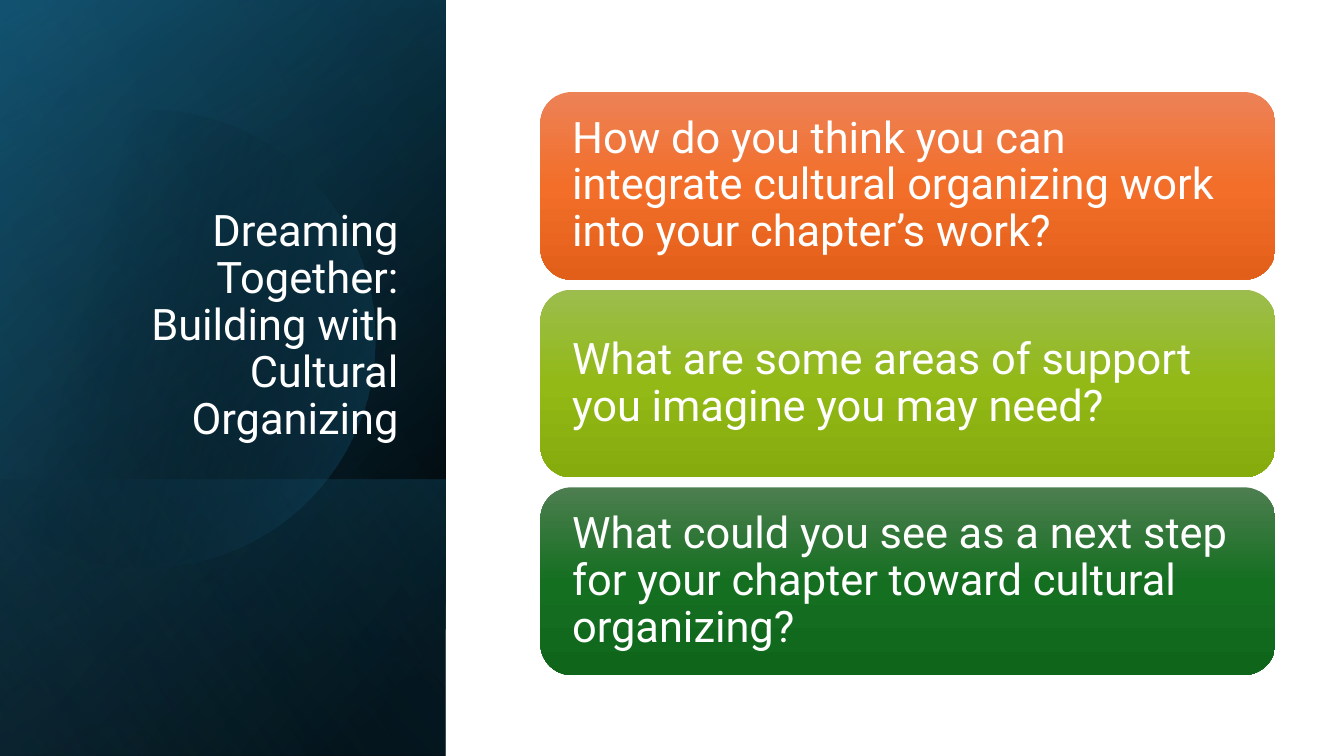
from math import acos, cos, sin

from lxml.etree import SubElement
from pptx import Presentation
from pptx.dml.color import RGBColor
from pptx.enum.shapes import MSO_SHAPE
from pptx.enum.text import MSO_ANCHOR, PP_ALIGN
from pptx.oxml.ns import qn
from pptx.util import Cm, Pt

BLACK = RGBColor(0x00, 0x00, 0x00)
WHITE = RGBColor(0xFF, 0xFF, 0xFF)
DEEP_BLUE = RGBColor(0x10, 0x48, 0x62)
BLUE = RGBColor(0x15, 0x60, 0x82)
SKY = RGBColor(0x46, 0xB1, 0xE1)
ORANGES = RGBColor(0xED, 0x82, 0x57), RGBColor(0xF2, 0x6E, 0x29), RGBColor(0xE2, 0x5F, 0x1A)
LIMES = RGBColor(0x9C, 0xBD, 0x4E), RGBColor(0x92, 0xB9, 0x16), RGBColor(0x85, 0xAB, 0x0D)
GREENS = RGBColor(0x4D, 0x7E, 0x50), RGBColor(0x15, 0x6F, 0x21), RGBColor(0x0F, 0x66, 0x1B)

SLIDE_H = 19.05
PANEL_W = 11.23
CARD_TOP, CARD_H, CARD_PITCH = 2.32, 4.73, 4.98

QUESTIONS = [
    ("How do you think you can integrate cultural organizing work into your chapter’s work?", ORANGES),
    ("What are some areas of support you imagine you may need?", LIMES),
    ("What could you see as a next step for your chapter toward cultural organizing?", GREENS),
]


def fill_gradient(sp, stops, angle):
    """Fill with (position %, colour, opacity %) stops; angle is clockwise degrees."""
    sp.shadow.inherit = False
    sp.line.fill.background()
    sp.fill.gradient()
    grad = sp._element.spPr.find(qn("a:gradFill"))
    for child in list(grad):
        grad.remove(child)
    grad.set("rotWithShape", "1")
    gs_list = SubElement(grad, qn("a:gsLst"))
    for pos, color, opacity in stops:
        gs = SubElement(gs_list, qn("a:gs"), pos=str(pos * 1000))
        clr = SubElement(gs, qn("a:srgbClr"), val=str(color))
        if opacity < 100:
            SubElement(clr, qn("a:alpha"), val=str(opacity * 1000))
    SubElement(grad, qn("a:lin"), ang=str(angle * 60000), scaled="0")


def add_panel_layer(s, stops, angle, top=0, height=SLIDE_H):
    """Add a mirrored quarter-turned rectangle that covers the left panel from top."""
    left = (PANEL_W - height) / 2
    sp = s.shapes.add_shape(MSO_SHAPE.RECTANGLE, Cm(left), Cm(top - left),
                            Cm(height), Cm(PANEL_W))
    sp.rotation = 90
    sp._element.spPr.find(qn("a:xfrm")).set("flipH", "1")
    fill_gradient(sp, stops, angle)


def add_cut_circle(s, cx, cy, radius, cut_x, stops, angle, steps=120):
    """Add a circle whose left side is cut straight at cut_x."""
    end = acos((cut_x - cx) / radius)
    angles = [end * (2 * i / steps - 1) for i in range(steps + 1)]
    points = [(Cm(cx + radius * cos(a)), Cm(cy + radius * sin(a))) for a in angles]
    builder = s.shapes.build_freeform(*points[0])
    builder.add_line_segments(points[1:], close=True)
    fill_gradient(builder.convert_to_shape(), stops, angle)


def set_text(sp, text, size=31, color=WHITE, align=PP_ALIGN.LEFT,
             anchor=MSO_ANCHOR.MIDDLE, inset=0.25):
    tf = sp.text_frame
    tf.word_wrap = True
    tf.vertical_anchor = anchor
    tf.margin_left = tf.margin_right = Cm(inset)
    tf.margin_top = tf.margin_bottom = Cm(0.13)
    p = tf.paragraphs[0]
    p.alignment = align
    p.line_spacing = 0.9
    r = p.add_run()
    r.text = text
    r.font.name = "Roboto"
    r.font.size = Pt(size)
    r.font.color.rgb = color


def add_card(s, top, text, colors):
    sp = s.shapes.add_shape(MSO_SHAPE.ROUNDED_RECTANGLE, Cm(13.62), Cm(top),
                            Cm(18.52), Cm(CARD_H))
    fill_gradient(sp, [(50 * i, color, 100) for i, color in enumerate(colors)], 90)
    set_text(sp, text, inset=0.57)


def main():
    prs = Presentation()
    prs.slide_width, prs.slide_height = Cm(33.87), Cm(SLIDE_H)
    s = prs.slides.add_slide(prs.slide_layouts[6])

    add_panel_layer(s, [(8, BLACK, 100), (100, DEEP_BLUE, 100)], 50)
    add_panel_layer(s, [(0, BLACK, 0), (99, BLUE, 46)], 30)
    add_panel_layer(s, [(2, BLUE, 29), (100, BLACK, 30)], 130, top=12.09, height=6.96)
    add_cut_circle(s, 3.68, 8.53, 5.77, -0.38, [(29, BLACK, 0), (100, BLUE, 43)], 14)
    add_panel_layer(s, [(0, BLACK, 0), (99, SKY, 11)], 120)

    title = s.shapes.add_textbox(Cm(1.63), Cm(4.67), Cm(8.66), Cm(6.65))
    set_text(title, "Dreaming Together: Building with Cultural Organizing",
             align=PP_ALIGN.RIGHT, anchor=MSO_ANCHOR.BOTTOM)

    for i, (text, colors) in enumerate(QUESTIONS):
        add_card(s, CARD_TOP + i * CARD_PITCH, text, colors)

    prs.save("out.pptx")


if __name__ == "__main__":
    main()
